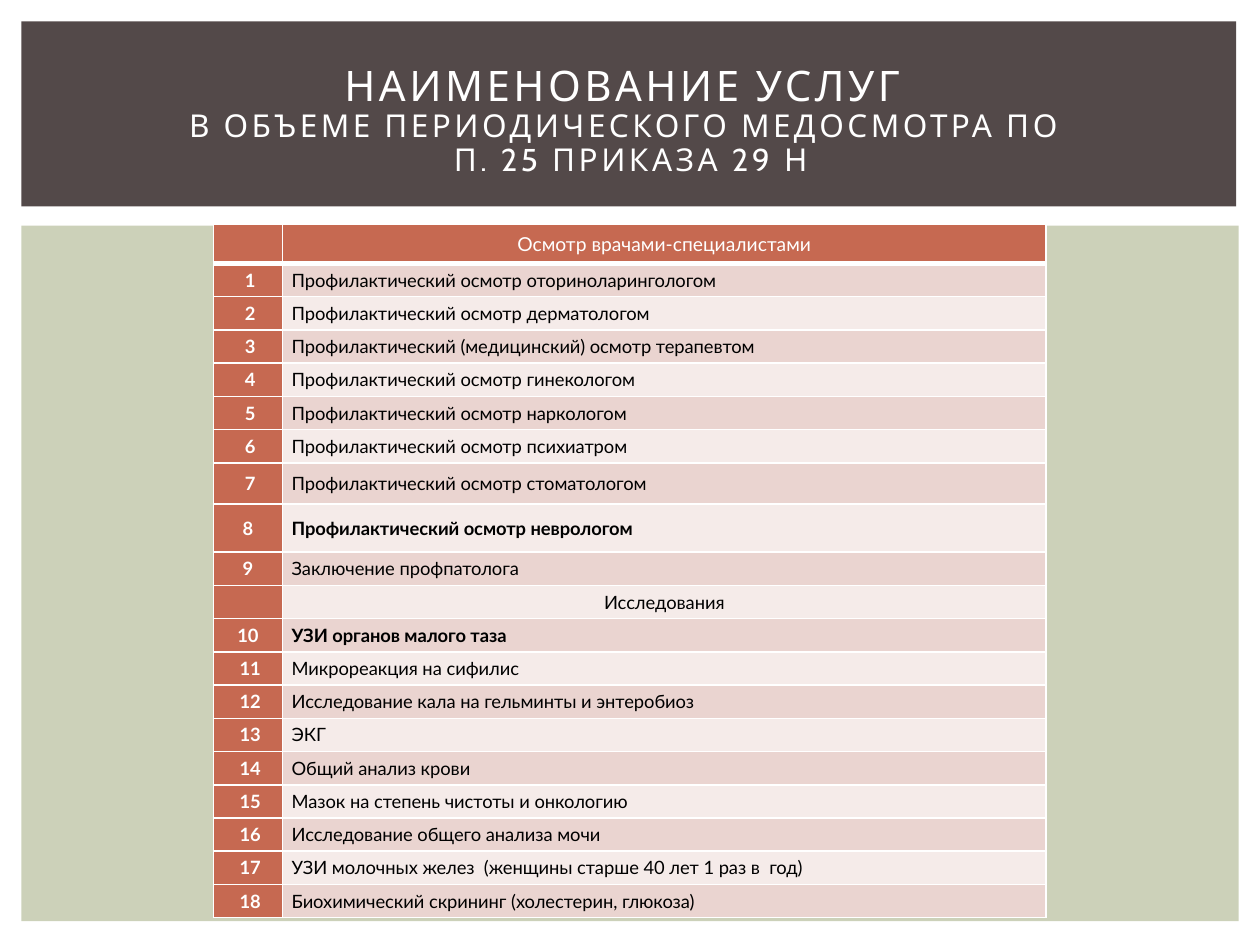
import pptx
import pptx.util
import pptx.dml.color
import pptx.enum.shapes
import pptx.enum.text
import pptx.oxml
import pptx.oxml.ns
import lxml.etree

Cm = pptx.util.Cm
Pt = pptx.util.Pt
Align = pptx.enum.text.PP_ALIGN
Mid = pptx.enum.text.MSO_ANCHOR.MIDDLE
qn = pptx.oxml.ns.qn

theme = {
    "white": "FFFFFF", "black": "000000",
    "panel": "CCD1B9", "band": "534949",
    "accent": "C66951", "odd": "EAD4D0", "even": "F5EBE9",
    "title": 24, "sub": 18, "head": 11, "text": 10.5,
    "title font": "Cabin", "table font": "Lato",
}


def put(par, text, font, size, color, bold=False):
    run = par.add_run()
    run.text = text
    run.font.name = theme[font]
    run.font.size = Pt(theme[size])
    run.font.bold = bold
    run.font.color.rgb = pptx.dml.color.RGBColor.from_string(theme[color])
    return run


def edge(cell, thick):
    """White cell borders: 3 pt on the thick side, 1 pt elsewhere."""
    props = cell._tc.get_or_add_tcPr()
    for pos, side in enumerate("LRTB"):
        line = lxml.etree.Element(qn(f"a:ln{side}"))
        line.set("w", str(Pt(3 if side == thick else 1)))
        fill = lxml.etree.SubElement(line, qn("a:solidFill"))
        lxml.etree.SubElement(fill, qn("a:srgbClr")).set("val", theme["white"])
        props.insert(pos, line)


deck = pptx.Presentation()
deck.slide_width, deck.slide_height = Cm(25.4), Cm(19.05)
slide = deck.slides.add_slide(deck.slide_layouts[5])

# Background panel and title band
for color, top, width, height in (
    ("panel", 4.55, 24.54, 14.02),
    ("band", 0.43, 24.49, 3.73),
):
    box = slide.shapes.add_shape(
        pptx.enum.shapes.MSO_SHAPE.RECTANGLE,
        Cm(0.43), Cm(top), Cm(width), Cm(height))
    box.shadow.inherit = False
    box.fill.solid()
    box.fill.fore_color.rgb = pptx.dml.color.RGBColor.from_string(theme[color])
    box.line.fill.background()

# Table: number, text, bold text; a row without a number is a heading
rows = [
    ("", "Осмотр врачами-специалистами", False),
    (" 1", "Профилактический осмотр оториноларингологом", False),
    (" 2", "Профилактический осмотр дерматологом", False),
    (" 3", "Профилактический (медицинский) осмотр терапевтом", False),
    (" 4", "Профилактический осмотр гинекологом", False),
    (" 5", "Профилактический осмотр наркологом", False),
    (" 6", "Профилактический осмотр психиатром", False),
    (" 7", "Профилактический осмотр стоматологом", False),
    ("8", "Профилактический осмотр неврологом", True),
    ("9", "Заключение профпатолога", False),
    ("", "Исследования", False),
    ("10", "УЗИ органов малого таза", True),
    (" 11", "Микрореакция на сифилис", False),
    (" 12", "Исследование кала на гельминты и энтеробиоз", False),
    (" 13", "ЭКГ", False),
    (" 14", "Общий анализ крови", False),
    (" 15", "Мазок на степень чистоты и онкологию", False),
    (" 16", "Исследование общего анализа мочи", False),
    (" 17", "УЗИ молочных желез  (женщины старше 40 лет 1 раз в  год)", False),
    (" 18", "Биохимический скрининг (холестерин, глюкоза)", False),
]
tall = {0: 0.78, 7: 0.83, 8: 0.97}
table = slide.shapes.add_table(
    len(rows), 2, Cm(4.3), Cm(4.53), Cm(16.79), Cm(13.97)).table
table.columns[0].width = Cm(1.4)
table.columns[1].width = Cm(15.39)

for i, (num, label, bold) in enumerate(rows):
    table.rows[i].height = Cm(tall.get(i, 0.67))
    size = "text" if i else "head"
    for j, text in enumerate((num, label)):
        cell = table.cell(i, j)
        dark = i == 0 or j == 0
        tone = "accent" if dark else "odd" if i % 2 else "even"
        cell.fill.solid()
        cell.fill.fore_color.rgb = pptx.dml.color.RGBColor.from_string(theme[tone])
        edge(cell, {0: "B", 1: "T"}.get(i))
        cell.vertical_anchor = Mid
        cell.margin_left = cell.margin_right = Cm(0.18)
        cell.margin_top = cell.margin_bottom = 0
        par = cell.text_frame.paragraphs[0]
        par.alignment = Align.CENTER if j == 0 or not num else Align.LEFT
        if text:
            put(par, text, "table font", size,
                "white" if dark else "black", bold or j == 0)
        else:
            # A small end mark keeps the empty cell from growing
            mark = lxml.etree.SubElement(par._p, qn("a:endParaRPr"))
            mark.set("sz", str(int(theme[size] * 100)))

# Title, brought in front of the band
title = slide.shapes.title
title.element.getparent().append(title.element)
title.left, title.top = Cm(1.07), Cm(0.99)
title.width, title.height = Cm(23.29), Cm(2.92)
frame = title.text_frame
frame.word_wrap = True
frame.auto_size = pptx.enum.text.MSO_AUTO_SIZE.NONE
frame.vertical_anchor = Mid
par = frame.paragraphs[0]
par.alignment = Align.CENTER
par.line_spacing = 0.9
for i, (text, size) in enumerate((
    ("НАИМЕНОВАНИЕ УСЛУГ ", "title"),
    ("В ОБЪЕМЕ ПЕРИОДИЧЕСКОГО МЕДОСМОТРА ПО ", "sub"),
    ("П. 25 ПРИКАЗА 29 Н", "sub"),
)):
    if i:
        par.add_line_break()
    run = put(par, text, "title font", size, "white")
    run.font._element.set("spc", "200")

deck.save("out.pptx")
